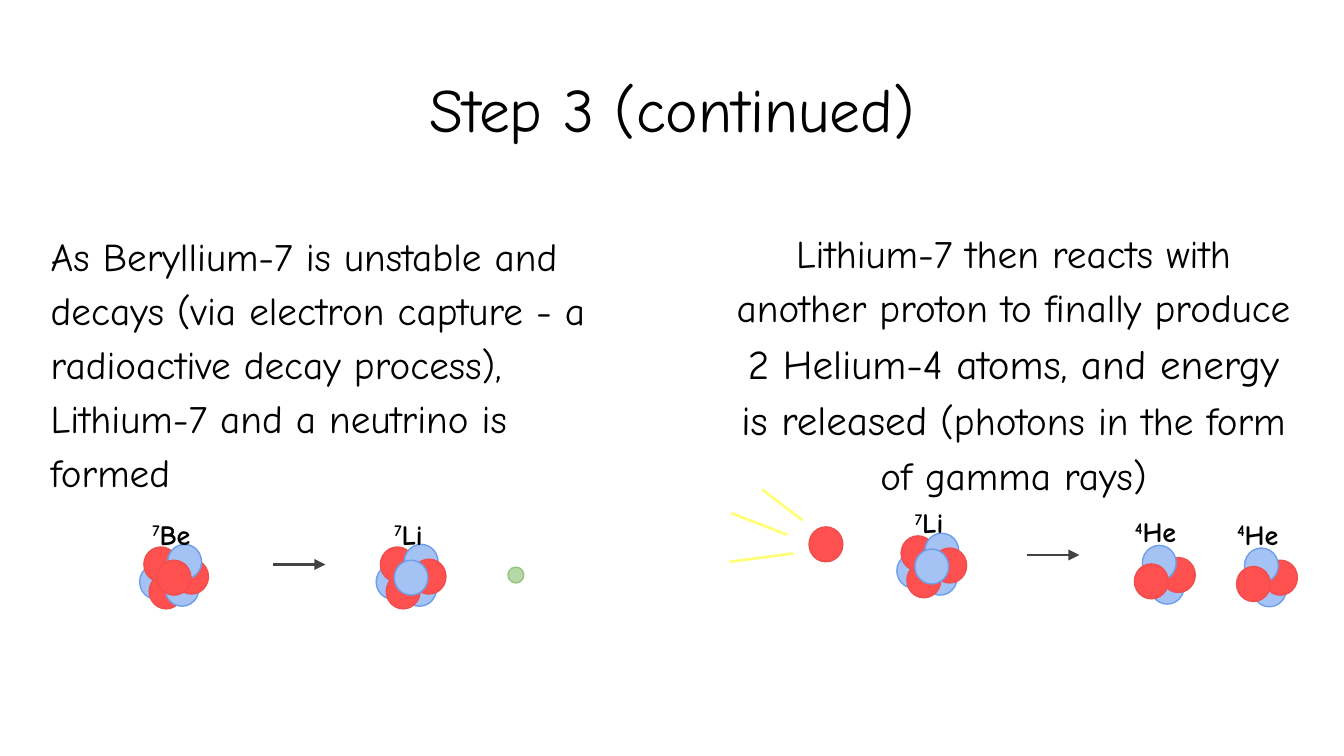
from dataclasses import dataclass

from lxml import etree
from pptx import Presentation
from pptx.dml.color import RGBColor
from pptx.enum.shapes import MSO_CONNECTOR, MSO_SHAPE
from pptx.enum.text import MSO_ANCHOR, MSO_AUTO_SIZE, PP_ALIGN
from pptx.oxml.ns import qn
from pptx.util import Cm, Pt

LEFT, CENTER = PP_ALIGN.LEFT, PP_ALIGN.CENTER
TOP = MSO_ANCHOR.TOP
FIXED = MSO_AUTO_SIZE.NONE
OVAL = MSO_SHAPE.OVAL
STRAIGHT = MSO_CONNECTOR.STRAIGHT

FONT = "Comic Neue"
COLORS = {
    "text": "000000",
    "proton": "FF5050",
    "proton_edge": "EE4E4E",
    "neutron": "A4C2F4",
    "neutron_edge": "6D9EEB",
    "lepton": "B6D7A8",
    "lepton_edge": "93C47D",
    "arrow": "434343",
    "ray": "FFFF7A",
}
BALL_W, BALL_H = 0.64, 0.66


@dataclass(frozen=True)
class Part:
    text: str
    size: float
    bold: bool = False
    raised: bool = False


@dataclass(frozen=True)
class Ball:
    kind: str
    x: float
    y: float


@dataclass(frozen=True)
class Atom:
    mass: str
    symbol: str
    balls: tuple[Ball, ...]
    tag_x: float
    tag_y: float


@dataclass(frozen=True)
class Stroke:
    start: tuple[float, float]
    end: tuple[float, float]
    color: str
    head: bool = False


P, N = "proton", "neutron"
BE = Atom("7", "Be", (
    Ball(N, 0, 0.38), Ball(P, 0.18, 0.56), Ball(N, 0.48, 0.51), Ball(P, 0.66, 0.28),
    Ball(P, 0.08, 0.05), Ball(N, 0.53, 0), Ball(P, 0.33, 0.3),
), -0.1, -0.86)
LI = Atom("7", "Li", (
    Ball(N, 0, 0.38), Ball(N, 0.5, 0.51), Ball(P, 0.19, 0.56), Ball(P, 0.08, 0.05),
    Ball(N, 0.53, 0), Ball(P, 0.68, 0.28), Ball(N, 0.34, 0.3),
), -0.09, -0.86)
HE = Atom("4", "He", (
    Ball(N, 0.3, 0.45), Ball(P, 0.51, 0.23), Ball(N, 0.15, 0), Ball(P, 0, 0.35),
), -0.3, -0.93)

ATOMS = [
    (BE, 2.64, 10.29),
    (LI, 7.11, 10.29),
    (LI, 16.95, 10.08),
    (HE, 21.44, 10.31),
    (HE, 23.37, 10.36),
]
STROKES = [
    Stroke((5.16, 10.67), (6.15, 10.67), "arrow", True),
    Stroke((19.41, 10.49), (20.4, 10.49), "arrow", True),
    Stroke((14.99, 10.46), (13.79, 10.62), "ray"),
    Stroke((14.88, 10.11), (13.82, 9.7), "ray"),
    Stroke((15.16, 9.83), (14.4, 9.25), "ray"),
]
DECAY = [Part(
    "As Beryllium-7 is unstable and decays (via electron capture - a radioactive "
    "decay process), Lithium-7 and a neutrino is formed", 21)]
FUSION = [
    Part("Lithium-7 then reacts with another proton to finally produce ", 21),
    Part("2 Helium-4 atoms, and energy is released", 22),
    Part(" (photons in the form of gamma rays)", 21),
]


def paint(name: str) -> RGBColor:
    return RGBColor.from_string(COLORS[name])


def write(frame, parts: list[Part], align) -> None:
    frame.word_wrap = True
    frame.auto_size = FIXED
    frame.vertical_anchor = TOP
    frame.margin_left = frame.margin_right = Cm(0.25)
    frame.margin_top = frame.margin_bottom = Cm(0.25)
    line = frame.paragraphs[0]
    line.alignment = align
    line.line_spacing = 1.15
    for part in parts:
        run = line.add_run()
        run.text = part.text
        font = run.font
        font.name, font.size, font.bold = FONT, Pt(part.size), part.bold
        font.color.rgb = paint("text")
        if part.raised:
            font._element.set("baseline", "30000")


def add_text(slide, x: float, y: float, w: float, h: float,
             parts: list[Part], align=CENTER) -> None:
    box = slide.shapes.add_textbox(Cm(x), Cm(y), Cm(w), Cm(h))
    write(box.text_frame, parts, align)


def add_ball(slide, kind: str, x: float, y: float,
             w: float = BALL_W, h: float = BALL_H) -> None:
    ball = slide.shapes.add_shape(OVAL, Cm(x), Cm(y), Cm(w), Cm(h))
    ball.shadow.inherit = False
    ball.fill.solid()
    ball.fill.fore_color.rgb = paint(kind)
    ball.line.color.rgb = paint(kind + "_edge")
    ball.line.width = Pt(0.75)


def add_atom(slide, atom: Atom, x: float, y: float) -> None:
    for ball in atom.balls:
        add_ball(slide, ball.kind, x + ball.x, y + ball.y)
    parts = [Part(atom.mass, 15, True, True), Part(atom.symbol, 15, True)]
    add_text(slide, x + atom.tag_x, y + atom.tag_y, 1.4, 1.14, parts)


def add_stroke(slide, stroke: Stroke) -> None:
    ends = [Cm(v) for v in stroke.start + stroke.end]
    line = slide.shapes.add_connector(STRAIGHT, *ends)
    line.line.color.rgb = paint(stroke.color)
    line.line.width = Pt(1.5)
    if stroke.head:
        etree.SubElement(line.line._get_or_add_ln(), qn("a:tailEnd"), type="triangle")
    etree.SubElement(line._element.spPr, qn("a:effectLst"))


def main() -> None:
    deck = Presentation()
    deck.slide_width, deck.slide_height = Cm(25.4), Cm(14.29)
    slide = deck.slides.add_slide(deck.slide_layouts[5])

    title = slide.shapes.title
    title.left, title.top = Cm(0), Cm(0.89)
    title.width, title.height = Cm(25.4), Cm(1.93)
    write(title.text_frame, [Part("Step 3 (continued)", 33)], CENTER)

    add_text(slide, 0.71, 4.01, 11.13, 4.5, DECAY, LEFT)
    add_text(slide, 13.59, 3.96, 11.13, 4.6, FUSION)
    for atom, x, y in ATOMS:
        add_atom(slide, atom, x, y)
    add_ball(slide, "lepton", 9.6, 10.72, 0.3, 0.3)
    add_ball(slide, P, 15.29, 9.96)
    for stroke in STROKES:
        add_stroke(slide, stroke)

    deck.save("out.pptx")


if __name__ == "__main__":
    main()
